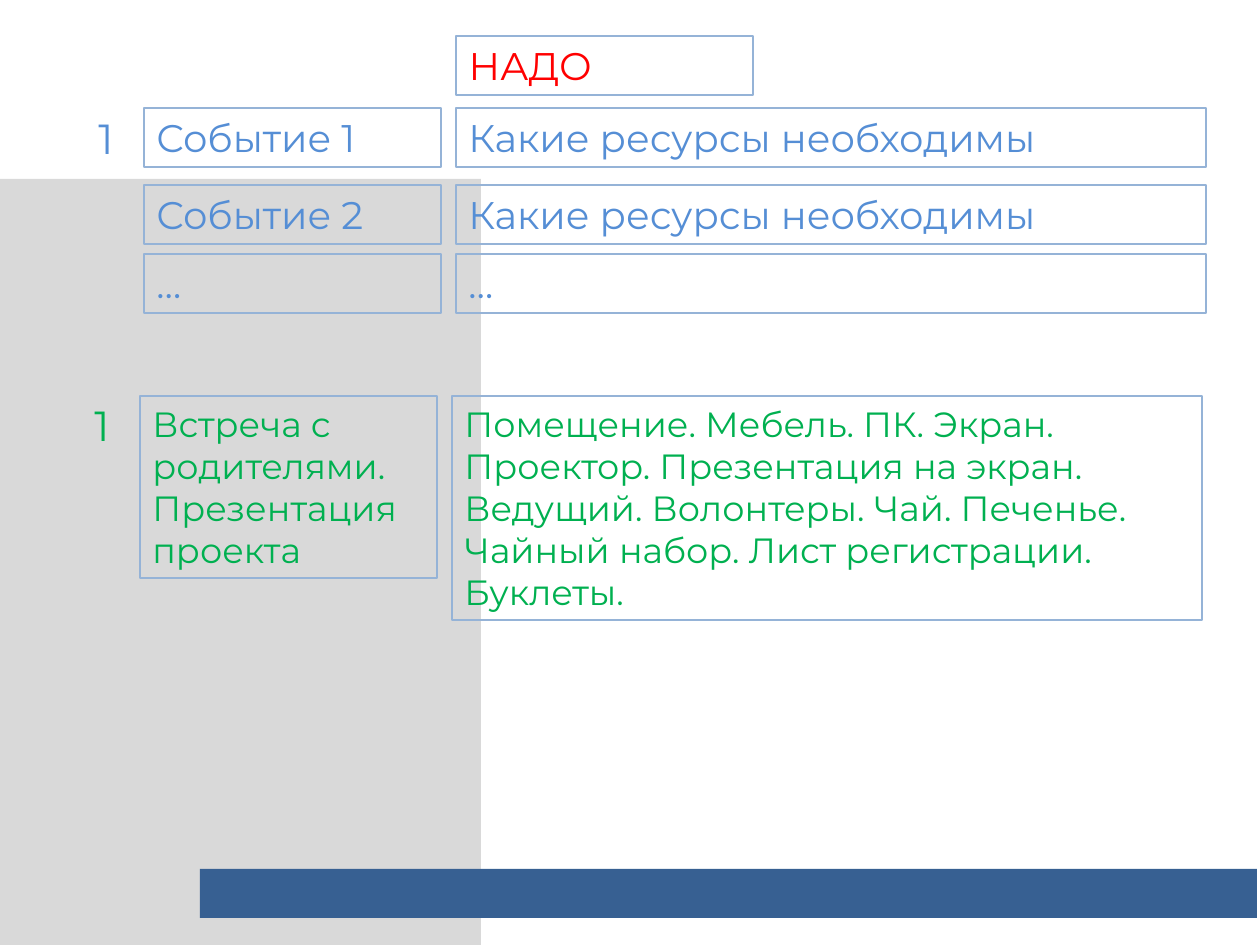
import pptx
import pptx.util
import pptx.dml.color
import pptx.enum.shapes
import pptx.enum.text

FONT = "Montserrat"
BLUE, GREEN, RED = "558ED5", "00B050", "FF0000"
BORDER = "95B3D7"
EVENT_LEFT, EVENT_WIDTH = 144, 297
RESOURCE_LEFT, RESOURCE_WIDTH = 456, 750
ROW_HEIGHT = 59
GROW = pptx.enum.text.MSO_AUTO_SIZE.SHAPE_TO_FIT_TEXT
FIXED = pptx.enum.text.MSO_AUTO_SIZE.NONE


def px(length):
    return pptx.util.Emu(round(length * 914400 / 126))


def colour(value):
    return pptx.dml.color.RGBColor.from_string(value)


def write(shape, text, size, ink, align=pptx.enum.text.PP_ALIGN.LEFT,
          fit=GROW):
    frame = shape.text_frame
    frame.word_wrap = True
    frame.auto_size = fit
    frame.vertical_anchor = pptx.enum.text.MSO_ANCHOR.TOP
    paragraph = frame.paragraphs[0]
    paragraph.alignment = align
    run = paragraph.add_run()
    run.text = text
    run.font.name = FONT
    run.font.size = pptx.util.Pt(size)
    run.font.color.rgb = colour(ink)


def outline(shape):
    shape.fill.background()
    shape.line.color.rgb = colour(BORDER)
    shape.line.width = pptx.util.Pt(0.75)


def add_rectangle(slide, left, top, width, height):
    rectangle = slide.shapes.add_shape(
        pptx.enum.shapes.MSO_SHAPE.RECTANGLE,
        px(left), px(top), px(width), px(height))
    rectangle.shadow.inherit = False
    return rectangle


def add_band(slide, left, top, width, height, fill):
    band = add_rectangle(slide, left, top, width, height)
    band.fill.solid()
    band.fill.fore_color.rgb = colour(fill)
    band.line.fill.background()


def add_cell(slide, left, top, width, height, text, size, ink):
    cell = add_rectangle(slide, left, top, width, height)
    outline(cell)
    write(cell, text, size, ink)


def add_number(slide, left, top, text, ink):
    number = slide.shapes.add_textbox(px(left), px(top), px(76), px(63))
    write(number, text, 24, ink, pptx.enum.text.PP_ALIGN.CENTER)


def place_title(slide, text):
    title = slide.shapes.title
    title.left, title.top = px(RESOURCE_LEFT), px(36)
    title.width, title.height = px(EVENT_WIDTH), px(ROW_HEIGHT)
    outline(title)
    write(title, text, 22, RED, fit=FIXED)


def main():
    deck = pptx.Presentation()
    deck.slide_width, deck.slide_height = px(1260), px(945)
    slide = deck.slides.add_slide(deck.slide_layouts[5])

    add_band(slide, 0, 179, 481, 770, "D9D9D9")
    add_band(slide, 200, 869, 1057, 49, "376092")
    place_title(slide, "НАДО")

    add_number(slide, 68, 106, "1", BLUE)
    plan = [
        (108, "Событие 1", "Какие ресурсы необходимы"),
        (185, "Событие 2", "Какие ресурсы необходимы"),
        (254, "…", "…"),
    ]
    for top, event, resources in plan:
        add_cell(slide, EVENT_LEFT, top, EVENT_WIDTH, ROW_HEIGHT,
                 event, 22, BLUE)
        add_cell(slide, RESOURCE_LEFT, top, RESOURCE_WIDTH, ROW_HEIGHT,
                 resources, 22, BLUE)

    add_number(slide, 64, 393, "1", GREEN)
    add_cell(slide, EVENT_LEFT - 4, 396, EVENT_WIDTH, 182,
             "Встреча с родителями. Презентация проекта", 20, GREEN)
    add_cell(slide, RESOURCE_LEFT - 4, 396, RESOURCE_WIDTH, 224,
             "Помещение. Мебель. ПК. Экран. Проектор. Презентация на экран. "
             "Ведущий. Волонтеры. Чай. Печенье. Чайный набор. "
             "Лист регистрации. Буклеты.", 20, GREEN)

    deck.save("out.pptx")


if __name__ == "__main__":
    main()
